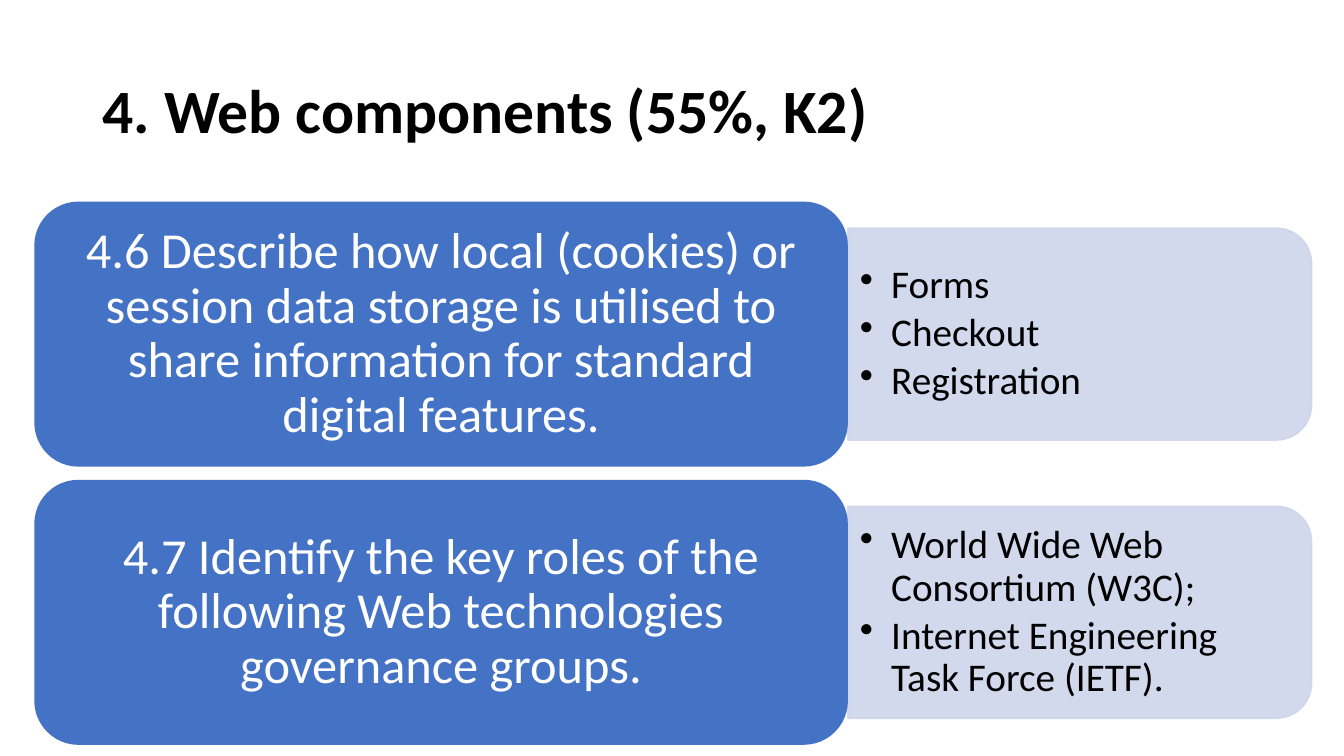
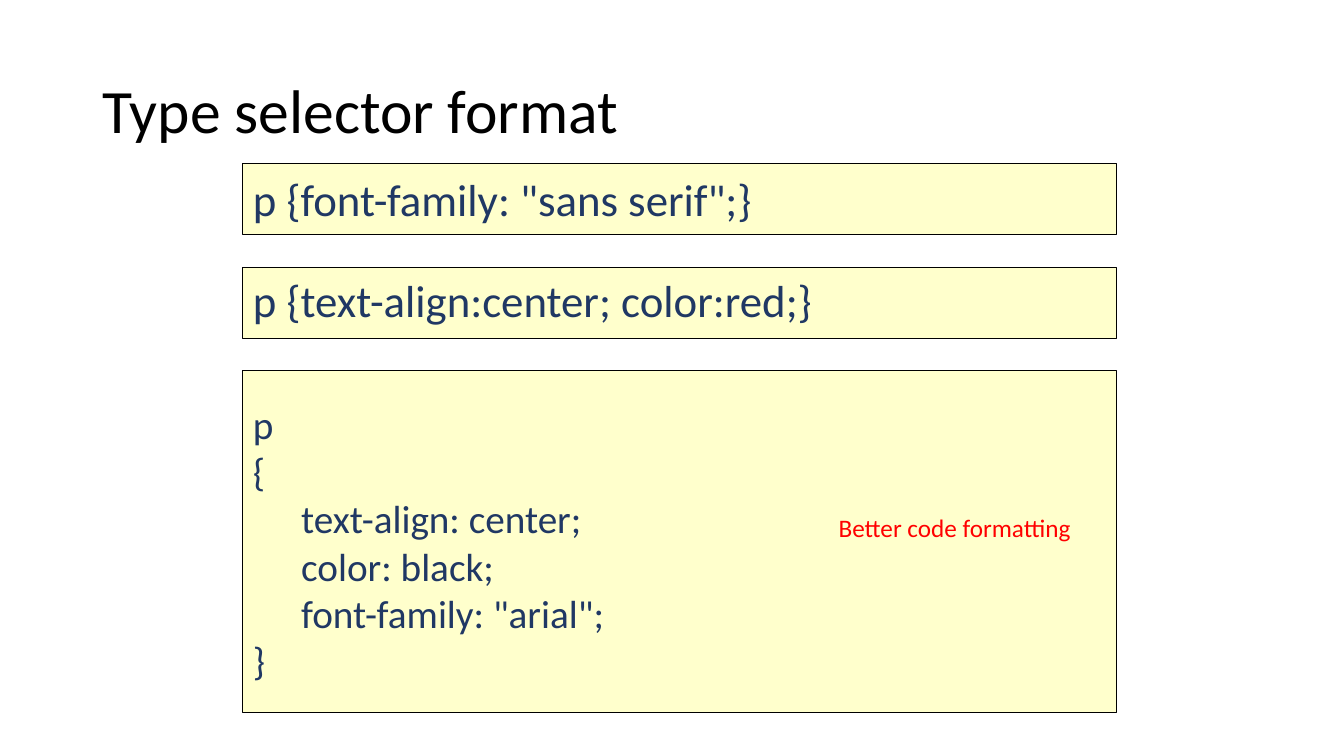
from math import cos, pi, sin

from lxml.etree import SubElement
from pptx import Presentation
from pptx.dml.color import RGBColor
from pptx.enum.shapes import MSO_SHAPE as Shape
from pptx.enum.text import MSO_ANCHOR as Anchor, PP_ALIGN as Align
from pptx.oxml.ns import qn
from pptx.util import Inches, Pt

FONT = "Calibri"
COLORS = {
    "ink": "000000", "paper": "FFFFFF", "goal": "4472C4", "detail": "CFD5EA",
    "code_box": "FFFFCC", "code": "203864", "remark": "FF0000",
}
STYLES = {
    "title": {"size": Pt(44), "color": "ink"},
    "goal": {"size": Pt(36), "color": "paper"},
    "detail": {"size": Pt(28), "color": "ink"},
    "rule": {"size": Pt(32), "color": "code"},
    "block": {"size": Pt(28), "color": "code"},
    "remark": {"size": Pt(18), "color": "remark"},
}
TITLE_BOX = (0.92, 0.4, 11.5, 1.45)

GOALS = [
    ("4.6 Describe how local (cookies) or session data storage is utilised "
     "to share information for standard digital features.",
     ["Forms", "Checkout", "Registration"]),
    ("4.7 Identify the key roles of the following Web technologies "
     "governance groups.",
     ["World Wide Web Consortium (W3C);",
      "Internet Engineering Task Force (IETF)."]),
]
RULES = [
    ('p {font-family: "sans serif";}', {}),
    ("p {text-align:center; color:red;}", {"line_spacing": 0.9}),
]
BLOCK = ["p", "{", "\ttext-align: center;", "\tcolor: black;",
         '\tfont-family: "arial";', "}"]


def rgb(name):
    """Look up a palette colour."""
    return RGBColor.from_string(COLORS[name])


def set_all(target, values):
    """Set each attribute given in a dict of values."""
    for name, value in values.items():
        setattr(target, name, value)


def indent(paragraph, left, first=0.0):
    """Give a paragraph a left margin and a first-line indent in inches."""
    properties = paragraph._p.get_or_add_pPr()
    properties.set("marL", str(Inches(left)))
    properties.set("indent", str(Inches(first)))
    return properties


def write(shape, lines, style, frame=None, bold=None, **paragraph_format):
    """Fill a shape with one styled paragraph per line."""
    text = shape.text_frame
    set_all(text, {"word_wrap": True, "vertical_anchor": Anchor.MIDDLE,
                   **(frame or {})})
    for number, line in enumerate(lines):
        paragraph = text.add_paragraph() if number else text.paragraphs[0]
        set_all(paragraph, {"alignment": Align.LEFT, **paragraph_format})
        run = paragraph.add_run()
        run.text = line.lstrip("\t")
        if line.startswith("\t"):
            indent(paragraph, 0.48)
        set_all(run.font, {"name": FONT, "size": STYLES[style]["size"],
                           "bold": bold})
        run.font.color.rgb = rgb(STYLES[style]["color"])
    return text.paragraphs


def paint(shape, fill, line=None, width=1.0):
    """Give a shape a flat fill and an optional outline."""
    shape.shadow.inherit = False
    shape.fill.solid()
    shape.fill.fore_color.rgb = rgb(fill)
    if line:
        shape.line.color.rgb = rgb(line)
        shape.line.width = Pt(width)
    else:
        shape.line.fill.background()


def insets(left, top, right, bottom):
    """Return text margins as format values."""
    return {"margin_left": Inches(left), "margin_top": Inches(top),
            "margin_right": Inches(right), "margin_bottom": Inches(bottom)}


def add_slide(deck, title, bold=None):
    """Add a blank slide with the shared title."""
    slide = deck.slides.add_slide(deck.slide_layouts[6])
    box = slide.shapes.add_textbox(*map(Inches, TITLE_BOX))
    write(box, [title], "title", bold=bold, line_spacing=0.9)
    return slide


def add_detail(slide, left, top, width, height, items, radius=0.35, steps=12):
    """Draw a bulleted panel whose right corners are rounded."""
    right, bottom = left + width, top + height
    turns = [pi / 2 * step / steps for step in range(steps + 1)]
    upper = [(right - radius + radius * sin(t), top + radius - radius * cos(t))
             for t in turns]
    lower = [(x, top + bottom - y) for x, y in reversed(upper)]
    outline = [(Inches(x), Inches(y))
               for x, y in upper + lower + [(left, bottom)]]
    builder = slide.shapes.build_freeform(Inches(left), Inches(top))
    builder.add_line_segments(outline, close=True)
    panel = builder.convert_to_shape()
    paint(panel, "detail", "detail")
    for color in panel._element.spPr.iter(qn("a:srgbClr")):
        SubElement(color, qn("a:alpha"), val="90000")
    for paragraph in write(panel, items, "detail",
                           insets(0.12, 0.16, 0.22, 0.16),
                           line_spacing=0.9, space_after=Pt(4)):
        SubElement(indent(paragraph, 0.31, -0.31), qn("a:buChar"), char="•")


def add_goal_row(slide, left, top, width, height, goal, items):
    """Draw one goal card with its detail panel on the right."""
    card_width, panel_height = 8.07, height * 0.8
    add_detail(slide, left + card_width, top + (height - panel_height) / 2,
               width - card_width, panel_height, items)
    card = slide.shapes.add_shape(
        Shape.ROUNDED_RECTANGLE,
        *map(Inches, (left, top, card_width, height)))
    paint(card, "goal")
    write(card, [goal], "goal", insets(0.28, 0.2, 0.28, 0.2),
          alignment=Align.CENTER, line_spacing=0.9)


def add_code(slide, left, top, width, height, lines, style, spacing):
    """Draw a code box."""
    box = slide.shapes.add_shape(
        Shape.RECTANGLE, *map(Inches, (left, top, width, height)))
    paint(box, "code_box", "ink", 0.75)
    write(box, lines, style, **spacing)


def build_goals(deck):
    """Build the slide of goals and details."""
    slide = add_slide(deck, "4. Web components (55%, K2)", bold=True)
    left, top, width, height, gap = 0.34, 2.0, 12.67, 2.63, 0.13
    for row, (goal, items) in enumerate(GOALS):
        add_goal_row(slide, left, top + row * (height + gap), width, height,
                     goal, items)


def build_selectors(deck):
    """Build the slide of code samples."""
    slide = add_slide(deck, "Type selector format")
    left, top, width, height, pitch = 2.41, 1.62, 8.66, 0.71, 1.03
    for row, (rule, spacing) in enumerate(RULES):
        add_code(slide, left, top + row * pitch, width, height, [rule],
                 "rule", spacing)
    block_top = top + len(RULES) * pitch
    add_code(slide, left, block_top, width, 3.39, BLOCK, "block", {})
    remark = slide.shapes.add_textbox(
        *map(Inches, (left + 5.81, block_top + 1.35, 2.54, 0.4)))
    write(remark, ["Better code formatting"], "remark",
          {"word_wrap": False, "vertical_anchor": Anchor.TOP})


def main():
    """Build and save the deck."""
    deck = Presentation()
    set_all(deck, {"slide_width": Inches(13.33), "slide_height": Inches(7.5)})
    build_goals(deck)
    build_selectors(deck)
    deck.save("out.pptx")


if __name__ == "__main__":
    main()
